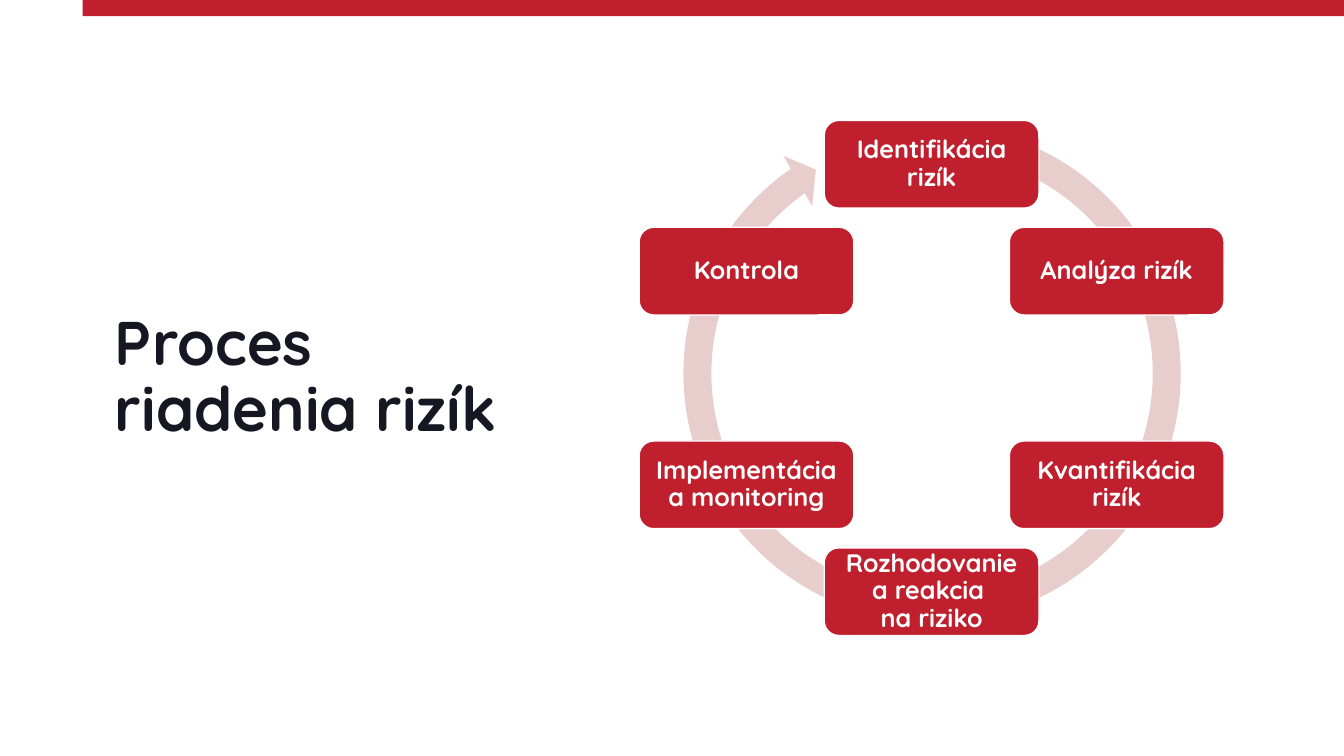
from math import cos, pi, sin

from pptx import Presentation
from pptx.dml.color import RGBColor
from pptx.enum.shapes import MSO_SHAPE
from pptx.enum.text import MSO_ANCHOR, MSO_AUTO_SIZE, PP_ALIGN
from pptx.util import Inches, Pt

RED = RGBColor(0xC0, 0x20, 0x2E)
PINK = RGBColor(0xE8, 0xCD, 0xCD)
INK = RGBColor(0x17, 0x17, 0x23)
WHITE = RGBColor(0xFF, 0xFF, 0xFF)

STEPS = [
    "Identifikácia rizík",
    "Analýza rizík",
    "Kvantifikácia rizík",
    "Rozhodovanie a reakcia \vna riziko",
    "Implementácia a monitoring",
    "Kontrola",
]
CENTER_X, CENTER_Y, RADIUS = 9.24, 3.75, 2.12
STEP_W, STEP_H = 2.13, 0.87


class SlideBuilder:
    font_name = "Quicksand"

    def __init__(self, slide):
        self.slide = slide

    def format_text(self, tf, size, color, align):
        tf.word_wrap = True
        tf.auto_size = MSO_AUTO_SIZE.NONE
        tf.vertical_anchor = MSO_ANCHOR.MIDDLE
        p = tf.paragraphs[0]
        p.alignment = align
        p.line_spacing = 0.9
        p.font.name = self.font_name
        p.font.size = Pt(size)
        p.font.bold = True
        p.font.color.rgb = color

    def title(self, text, x, y, w, h):
        sp = self.slide.shapes.title
        sp.left, sp.top, sp.width, sp.height = map(Inches, (x, y, w, h))
        sp.text_frame.text = text
        self.format_text(sp.text_frame, 44, INK, PP_ALIGN.LEFT)

    def shape(self, kind, x, y, w, h, fill):
        sp = self.slide.shapes.add_shape(kind, *map(Inches, (x, y, w, h)))
        sp.shadow.inherit = False
        sp.fill.solid()
        sp.fill.fore_color.rgb = fill
        sp.line.fill.background()
        return sp

    def cycle_arrow(self, x, y, size):
        sp = self.shape(MSO_SHAPE.CIRCULAR_ARROW, x, y, size, size, PINK)
        for i, value in enumerate((0.053, 3.126, 141.059, 171.989, 0.055)):
            sp.adjustments[i] = value

    def step(self, text, center_x, center_y):
        sp = self.shape(MSO_SHAPE.ROUNDED_RECTANGLE, center_x - STEP_W / 2,
                        center_y - STEP_H / 2, STEP_W, STEP_H, RED)
        sp.line.color.rgb = WHITE
        sp.line.width = Pt(1)
        tf = sp.text_frame
        tf.margin_left = tf.margin_right = Inches(0.07)
        tf.margin_top = tf.margin_bottom = Inches(0.07)
        tf.text = text
        self.format_text(tf, 18, WHITE, PP_ALIGN.CENTER)


def main():
    prs = Presentation()
    prs.slide_width, prs.slide_height = Inches(13.33), Inches(7.5)
    s = SlideBuilder(prs.slides.add_slide(prs.slide_layouts.get_by_name("Title Only")))

    s.shape(MSO_SHAPE.RECTANGLE, 0.82, 0, 12.51, 0.16, RED)
    s.title("Proces riadenia rizík", 1.04, 3.03, 4.21, 1.45)
    s.cycle_arrow(6.63, 1.09, 5.23)
    for i, text in enumerate(STEPS):
        angle = 2 * pi * i / len(STEPS)
        s.step(text, CENTER_X + RADIUS * sin(angle), CENTER_Y - RADIUS * cos(angle))

    prs.save("out.pptx")


if __name__ == "__main__":
    main()
